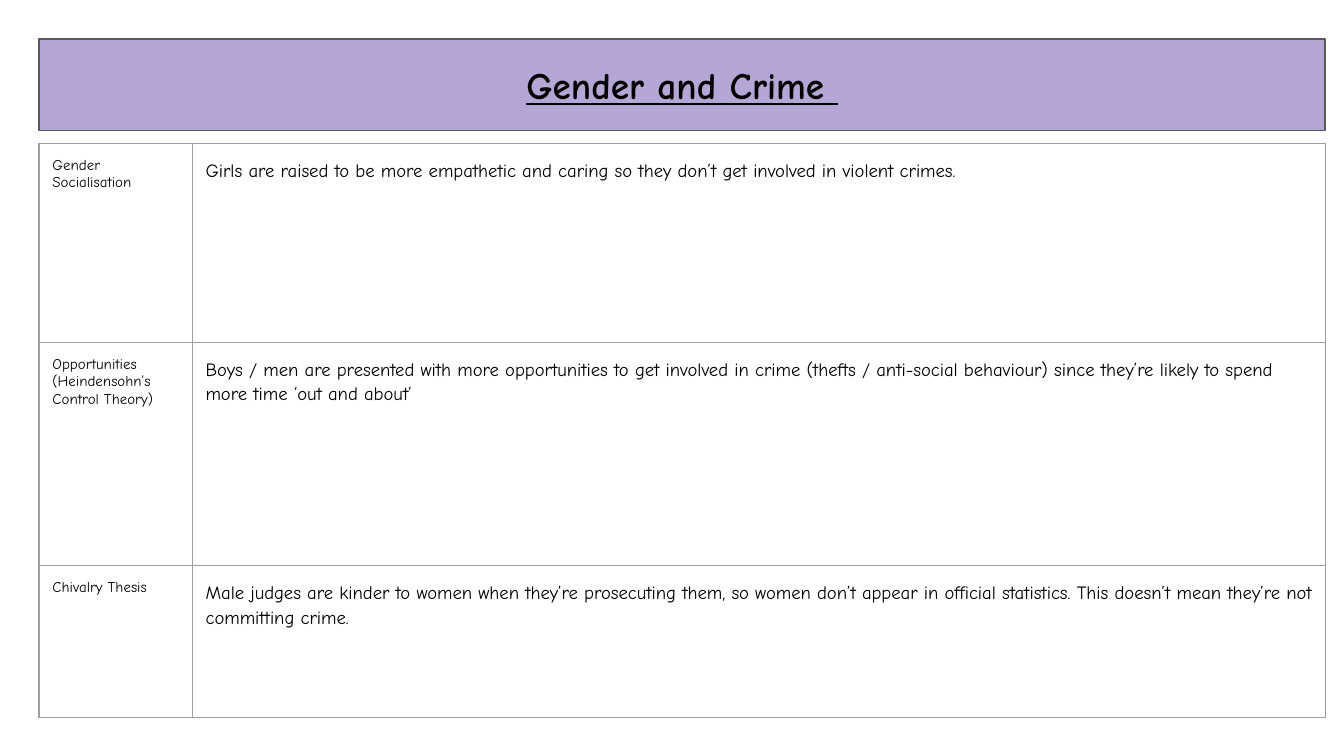
from dataclasses import dataclass

from lxml.etree import SubElement
from pptx import Presentation
from pptx.dml.color import RGBColor
from pptx.enum.text import MSO_ANCHOR, MSO_AUTO_SIZE, PP_ALIGN
from pptx.oxml.ns import qn
from pptx.slide import Slide
from pptx.table import _Cell as Cell
from pptx.text.text import _Paragraph as Paragraph
from pptx.util import Inches, Pt

COLORS = {"banner": "B4A7D6", "outline": "595959", "grid": "9E9E9E", "text": "000000"}
FONT = "Comic Neue"
LEFT = 0.29
COLUMN_WIDTHS = (1.14, 8.43)
MARGINS = dict.fromkeys(
    ("margin_left", "margin_top", "margin_right", "margin_bottom"), Inches(0.1)
)
TERM_FONT = {"name": FONT, "size": Pt(8), "bold": False}
EXPLANATION_FONT = {"name": FONT, "size": Pt(10), "bold": False}
HEADING_FONT = {"name": FONT, "size": Pt(20), "bold": True, "underline": True}


@dataclass
class Theory:
    term: list[str]
    explanation: str
    height: float
    space_after: int = 12


THEORIES = [
    Theory(
        ["Gender Socialisation"],
        "Girls are raised to be more empathetic and caring so they don’t get "
        "involved in violent crimes.",
        1.48,
        space_after=0,
    ),
    Theory(
        ["Opportunities", "(Heindensohn’s Control Theory)"],
        "Boys / men are presented with more opportunities to get involved in crime "
        "(thefts / anti-social behaviour) since they’re likely to spend more time "
        "‘out and about’",
        1.66,
    ),
    Theory(
        ["Chivalry Thesis"],
        "Male judges are kinder to women when they’re prosecuting them, so women "
        "don’t appear in official statistics. This doesn’t mean they’re not "
        "committing crime.",
        1.13,
    ),
]


def apply_format(target: object, values: dict) -> None:
    for name, value in values.items():
        setattr(target, name, value)


def write(paragraph: Paragraph, text: str, font_format: dict) -> None:
    run = paragraph.add_run()
    run.text = text
    apply_format(run.font, font_format)
    run.font.color.rgb = RGBColor.from_string(COLORS["text"])


def add_borders(cell: Cell) -> None:
    properties = cell._tc.get_or_add_tcPr()
    for side in ("a:lnL", "a:lnR", "a:lnT", "a:lnB"):
        border = SubElement(properties, qn(side), w=str(Pt(0.75)))
        fill = SubElement(border, qn("a:solidFill"))
        SubElement(fill, qn("a:srgbClr"), val=COLORS["grid"])


def fill_cell(cell: Cell, lines: list[str], font_format: dict, spacing: dict) -> None:
    apply_format(cell, MARGINS)
    add_borders(cell)
    cell.fill.background()
    frame = cell.text_frame
    for index, line in enumerate(lines):
        paragraph = frame.add_paragraph() if index else frame.paragraphs[0]
        apply_format(paragraph, spacing)
        write(paragraph, line, font_format)


def add_banner(slide: Slide, heading: str) -> None:
    banner = slide.shapes.title
    place = {"left": LEFT, "top": 0.29, "width": sum(COLUMN_WIDTHS), "height": 0.68}
    apply_format(banner, {name: Inches(value) for name, value in place.items()})
    banner.fill.solid()
    banner.fill.fore_color.rgb = RGBColor.from_string(COLORS["banner"])
    banner.line.color.rgb = RGBColor.from_string(COLORS["outline"])
    banner.line.width = Pt(0.75)
    frame = banner.text_frame
    apply_format(frame, MARGINS)
    frame.auto_size = MSO_AUTO_SIZE.NONE
    frame.vertical_anchor = MSO_ANCHOR.MIDDLE
    frame.paragraphs[0].alignment = PP_ALIGN.CENTER
    write(frame.paragraphs[0], heading, HEADING_FONT)


def add_theories(slide: Slide, theories: list[Theory]) -> None:
    table = slide.shapes.add_table(
        len(theories), len(COLUMN_WIDTHS), Inches(LEFT), Inches(1.07),
        Inches(sum(COLUMN_WIDTHS)), Inches(sum(t.height for t in theories)),
    ).table
    apply_format(table, {"first_row": False, "horz_banding": False})
    for column, width in zip(table.columns, COLUMN_WIDTHS):
        column.width = Inches(width)
    for row, theory in zip(table.rows, theories):
        row.height = Inches(theory.height)
        term, explanation = row.cells
        fill_cell(term, theory.term, TERM_FONT, {})
        spacing = {"line_spacing": 1.15, "space_after": Pt(theory.space_after)}
        fill_cell(explanation, [theory.explanation], EXPLANATION_FONT, spacing)


def main() -> None:
    # Widescreen 16:9 page
    deck = Presentation()
    deck.slide_width = Inches(10)
    deck.slide_height = deck.slide_width * 9 // 16
    slide = deck.slides.add_slide(deck.slide_layouts[5])  # title only

    # Heading banner
    add_banner(slide, "Gender and Crime ")

    # Theories and their explanations
    add_theories(slide, THEORIES)

    deck.save("out.pptx")


if __name__ == "__main__":
    main()
